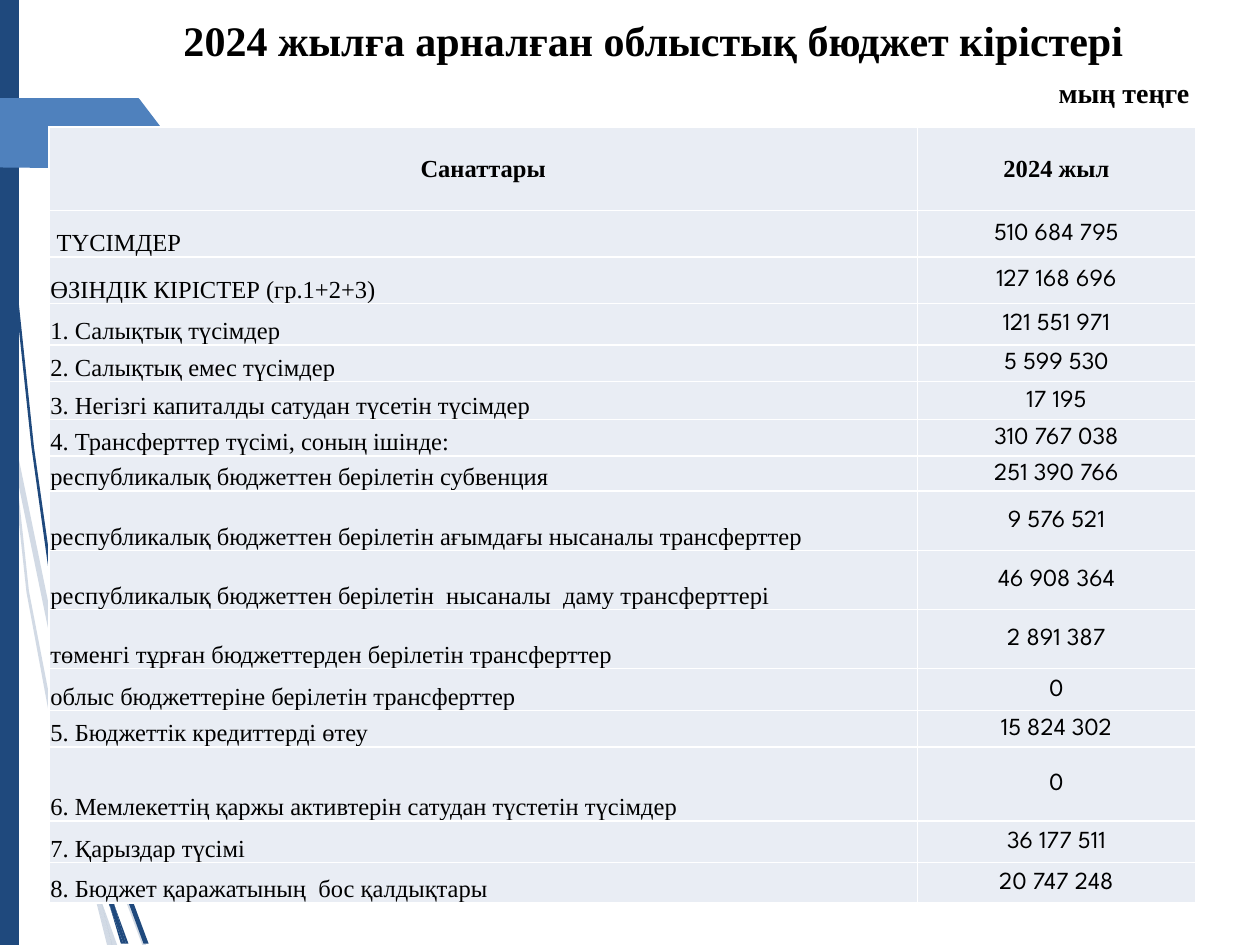
import pptx
import pptx.dml.color
import pptx.enum.shapes
import pptx.enum.text
import pptx.oxml
import pptx.oxml.ns
import pptx.util
from pptx.util import Inches

NAVY, BLUE, PALE, BLACK, WHITE = "1F497D", "4F81BD", "E9EDF4", "000000", "FFFFFF"
SERIF, SANS = "Times New Roman", "League Spartan"
NAMESPACE = pptx.oxml.ns.nsdecls("a")
CENTER = pptx.enum.text.PP_ALIGN.CENTER

# Outlines of the wisps, in inches on the slide
PALE_WISPS = [
    [(0.08, 3.5), (0.06, 3.22), (0, 2.82), (0, 2.99), (0.08, 3.44)],
    [(0.43, 5.22), (0.63, 5.99), (0.64, 5.86), (0.47, 5.2), (0.11, 3.45), (0.13, 3.76)],
    [(0.69, 6.07), (0.66, 5.96), (0.66, 6.1), (0.92, 6.94), (1.13, 7.5), (1.16, 7.5),
     (0.95, 6.92)],
    [(0.89, 7.5), (0.93, 7.5), (0.79, 7.11)],
    [(0.7, 6.83), (0.52, 6.19), (0.23, 4.69), (0.13, 3.76), (0.08, 3.5), (0.21, 4.7),
     (0.49, 6.21), (0.69, 6.93), (0.76, 7.14), (0.74, 7.07)],
    [(0.63, 5.99), (0.65, 6.46), (0.7, 6.83), (0.72, 6.92), (0.79, 7.11), (0.78, 7.06),
     (0.68, 6.46), (0.66, 6.1), (0.66, 6.08)],
    [(0.66, 5.84), (0.82, 4.62), (1.2, 3.49), (1.71, 2.45), (2.01, 1.98), (2.17, 1.75),
     (2.34, 1.53), (2.17, 1.75), (2.01, 1.97), (1.71, 2.44), (1.18, 3.48), (0.81, 4.61),
     (0.64, 5.84), (0.64, 5.86), (0.66, 5.96)],
    [(0.76, 7.14), (0.85, 7.5), (0.89, 7.5)],
    [(0.66, 6.08), (0.66, 6.1), (0.66, 5.96), (0.64, 5.86), (0.63, 5.99)],
    [(0.72, 6.92), (0.7, 6.83), (0.74, 7.07), (0.76, 7.14), (0.89, 7.5), (0.79, 7.11)],
]
NAVY_WISPS = [
    [(0.05, 1.1), (0.12, 2.33), (0.25, 3.55), (0.42, 4.77), (0.43, 4.81), (0.41, 4.57),
     (0.41, 4.53), (0.27, 3.55), (0.14, 2.32), (0.06, 1.09), (0.03, 0.48), (0.03, 0),
     (0.02, 0), (0.03, 0.48)],
    [(0.66, 5.92), (0.8, 6.45), (0.8, 6.31), (0.7, 5.9), (0.45, 4.72), (0.48, 5.05)],
    [(0.85, 6.49), (0.82, 6.41), (0.83, 6.56), (0.99, 7.08), (1.14, 7.49), (1.18, 7.49),
     (1.02, 7.06)],
    [(0.83, 6.91), (0.73, 6.57), (0.54, 5.56), (0.48, 5.05), (0.43, 4.77), (0.51, 5.57),
     (0.7, 6.59), (0.83, 7.08), (0.88, 7.22), (0.87, 7.17)],
    [(0.45, 4.72), (0.44, 4.53), (0.4, 3.49), (0.44, 2.45), (0.47, 1.93), (0.53, 1.41),
     (0.52, 1.41), (0.46, 1.93), (0.42, 2.45), (0.39, 3.49), (0.41, 4.49)],
    [(1, 7.49), (1.02, 7.49), (0.91, 7.19)],
    [(0.43, 4.78), (0.48, 5.05), (0.45, 4.72), (0.41, 4.49), (0.41, 4.53)],
    [(0.83, 6.33), (0.94, 5.52), (1.19, 4.76), (1.53, 4.06), (1.73, 3.74), (1.84, 3.59),
     (1.95, 3.44), (1.84, 3.58), (1.73, 3.73), (1.53, 4.05), (1.17, 4.74), (0.92, 5.51),
     (0.8, 6.31), (0.83, 6.41)],
    [(0.88, 7.22), (0.96, 7.49), (0.98, 7.49)],
    [(0.8, 6.45), (0.83, 6.92), (0.87, 7.06), (0.91, 7.19), (0.9, 7.16), (0.83, 6.56),
     (0.81, 6.51)],
    [(0.8, 6.45), (0.81, 6.51), (0.83, 6.56), (0.83, 6.41), (0.8, 6.31)],
    [(0.87, 7.06), (0.82, 6.91), (0.87, 7.17), (0.88, 7.22), (0.98, 7.49), (1, 7.49),
     (0.91, 7.19)],
]
BANNER = [(0, 0.78), (1.1, 0.78), (1.11, 0.79), (1.3, 1.04), (1.3, 1.08), (1.11, 1.33),
          (1.1, 1.34), (0, 1.33)]

# Category, value, row height
BUDGET_ROWS = [
    ("Санаттары", "2024 жыл", 0.66),
    ("ТҮСІМДЕР", "510 684 795", 0.37),
    ("ӨЗІНДІК КІРІСТЕР (гр.1+2+3)", "127 168 696", 0.37),
    ("1. Салықтық түсімдер", "121 551 971", 0.33),
    ("2. Салықтық емес түсімдер", "5 599 530", 0.29),
    ("3. Негізгі капиталды сатудан түсетін түсімдер", "17 195", 0.3),
    ("4. Трансферттер түсімі, соның ішінде:", "310 767 038", 0.29),
    ("республикалық бюджеттен берілетін субвенция", "251 390 766", 0.28),
    ("республикалық бюджеттен берілетін ағымдағы нысаналы трансферттер", "9 576 521", 0.47),
    ("республикалық бюджеттен берілетін  нысаналы  даму трансферттері", "46 908 364", 0.47),
    ("төменгі тұрған бюджеттерден берілетін трансферттер", "2 891 387", 0.47),
    ("облыс бюджеттеріне берілетін трансферттер", "0", 0.33),
    ("5. Бюджеттік кредиттерді өтеу", "15 824 302", 0.29),
    ("6. Мемлекеттің қаржы активтерін сатудан түстетін түсімдер", "0", 0.59),
    ("7. Қарыздар түсімі", "36 177 511", 0.33),
    ("8. Бюджет қаражатының  бос қалдықтары", "20 747 248", 0.32),
]


def color(value):
    return pptx.dml.color.RGBColor.from_string(value)


def paint(shape, fill, opacity=100):
    shape.shadow.inherit = False
    shape.fill.solid()
    shape.fill.fore_color.rgb = color(fill)
    shape.line.fill.background()
    if opacity < 100:
        rgb = shape.fill._xPr.find(".//" + pptx.oxml.ns.qn("a:srgbClr"))
        rgb.append(pptx.oxml.parse_xml(f'<a:alpha {NAMESPACE} val="{opacity * 1000}"/>'))


def add_outline(slide, points, fill, opacity=100):
    corners = [(Inches(x), Inches(y)) for x, y in points]
    builder = slide.shapes.build_freeform(*corners[0], scale=1.0)
    builder.add_line_segments(corners[1:], close=True)
    paint(builder.convert_to_shape(), fill, opacity)


def add_run(paragraph, text, size, font=SERIF, bold=False):
    run = paragraph.add_run()
    run.text = text
    run.font.size = pptx.util.Pt(size)
    run.font.name = font
    run.font.bold = bold
    run.font.color.rgb = color(BLACK)
    return run


def add_text(slide, box, text, size, alignment):
    shape = slide.shapes.add_textbox(*map(Inches, box))
    shape.text_frame.word_wrap = True
    paragraph = shape.text_frame.paragraphs[0]
    paragraph.alignment = alignment
    return shape.text_frame, add_run(paragraph, text, size, bold=True)


def add_text_shadow(run):
    run.font._element.find(pptx.oxml.ns.qn("a:solidFill")).addnext(pptx.oxml.parse_xml(
        f'<a:effectLst {NAMESPACE}><a:outerShdw blurRad="38100" dist="38100" dir="2700000">'
        '<a:srgbClr val="000000"><a:alpha val="43000"/></a:srgbClr>'
        '</a:outerShdw></a:effectLst>'))


def add_borders(cell):
    properties = cell._tc.get_or_add_tcPr()
    for index, side in enumerate(("lnL", "lnR", "lnT", "lnB")):
        properties.insert(index, pptx.oxml.parse_xml(
            f'<a:{side} {NAMESPACE} w="12700"><a:solidFill><a:srgbClr val="{WHITE}"/>'
            f'</a:solidFill></a:{side}>'))


def fill_cell(cell, text, anchor, alignment, font, bold):
    cell.margin_left = cell.margin_right = cell.margin_top = Inches(0.01)
    cell.margin_bottom = 0
    cell.vertical_anchor = anchor
    cell.fill.solid()
    cell.fill.fore_color.rgb = color(PALE)
    add_borders(cell)
    paragraph = cell.text_frame.paragraphs[0]
    paragraph.alignment = alignment
    add_run(paragraph, text, 14, font, bold)


def add_budget_table(slide):
    frame = slide.shapes.add_table(len(BUDGET_ROWS), 2, Inches(0.39), Inches(1.01),
                                   Inches(9.1), Inches(6.17))
    table = frame.table
    table.first_row = table.horz_banding = False
    table.columns[0].width = Inches(6.89)
    table.columns[1].width = Inches(2.21)
    middle = pptx.enum.text.MSO_ANCHOR.MIDDLE
    bottom = pptx.enum.text.MSO_ANCHOR.BOTTOM
    left = pptx.enum.text.PP_ALIGN.LEFT
    for index, (category, value, height) in enumerate(BUDGET_ROWS):
        table.rows[index].height = Inches(height)
        header = index == 0
        fill_cell(table.cell(index, 0), category, middle if header else bottom,
                  CENTER if header else left, SERIF, header)
        fill_cell(table.cell(index, 1), value, middle, CENTER,
                  SERIF if header else SANS, header)
    table.cell(1, 0).margin_left = Inches(0.06)


def main():
    presentation = pptx.Presentation()
    presentation.slide_width, presentation.slide_height = Inches(10), Inches(7.5)
    slide = presentation.slides.add_slide(presentation.slide_layouts[6])

    # Decoration at the left edge
    for points in PALE_WISPS:
        add_outline(slide, points, NAVY, 20)
    for points in NAVY_WISPS:
        add_outline(slide, points, NAVY)
    strip = slide.shapes.add_shape(pptx.enum.shapes.MSO_SHAPE.RECTANGLE, 0, 0,
                                   Inches(0.15), Inches(7.5))
    paint(strip, NAVY)
    add_outline(slide, BANNER, BLUE)

    add_budget_table(slide)

    # Title and unit
    frame, run = add_text(slide, (0.39, 0.07, 9.22, 0.5),
                          "2024 жылға арналған облыстық бюджет кірістері", 24, CENTER)
    frame.paragraphs[0]._p.get_or_add_pPr().set("indent", str(Inches(0.37)))
    add_text_shadow(run)
    frame, run = add_text(slide, (7.81, 0.55, 1.87, 0.37), "мың теңге", 16,
                          pptx.enum.text.PP_ALIGN.RIGHT)
    frame.margin_right = Inches(0.24)

    presentation.save("out.pptx")


if __name__ == "__main__":
    main()
